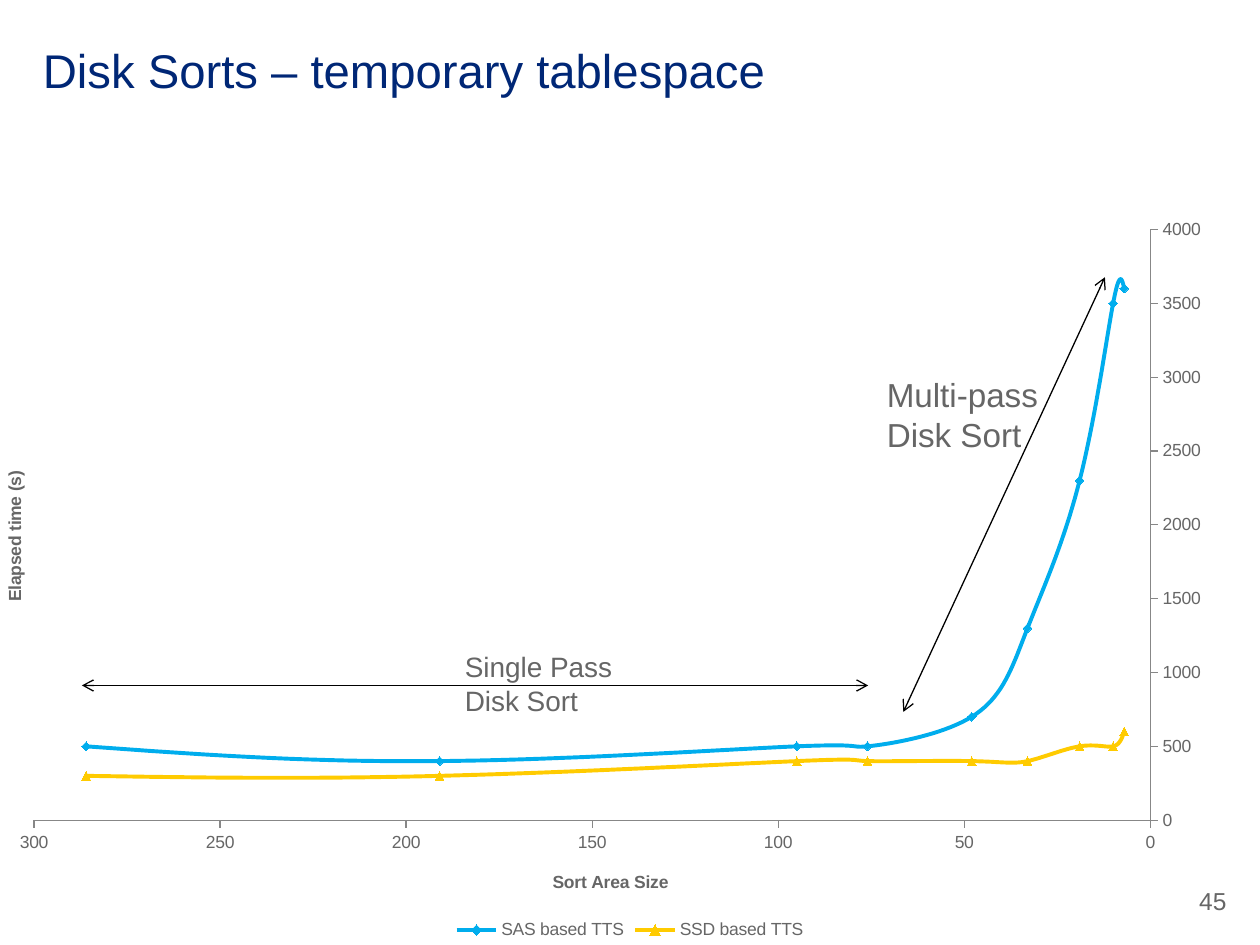
from dataclasses import dataclass

from pptx import Presentation
from pptx.chart.data import XyChartData
from pptx.dml.color import RGBColor
from pptx.enum.chart import XL_CHART_TYPE, XL_LEGEND_POSITION, XL_MARKER_STYLE, XL_TICK_MARK
from pptx.enum.shapes import MSO_CONNECTOR
from pptx.enum.text import MSO_ANCHOR, PP_ALIGN
from pptx.oxml import parse_xml
from pptx.oxml.ns import nsdecls, qn
from pptx.util import Pt


@dataclass(frozen=True)
class Theme:
    font: str = "Arial"
    title: RGBColor = RGBColor(0x00, 0x27, 0x76)
    text: RGBColor = RGBColor(0x66, 0x66, 0x66)
    axis: RGBColor = RGBColor(0x87, 0x87, 0x87)
    arrow: RGBColor = RGBColor(0, 0, 0)
    title_size: float = 27
    number_size: float = 14
    chart_size: float = 10


@dataclass(frozen=True)
class Label:
    lines: tuple
    box: tuple
    size: float


@dataclass(frozen=True)
class Arrow:
    begin: tuple
    end: tuple


@dataclass(frozen=True)
class Timing:
    name: str
    seconds: tuple
    color: RGBColor
    marker: XL_MARKER_STYLE


THEME = Theme()
SORT_AREAS = (7, 10, 19, 33, 48, 76, 95, 191, 286)
TIMINGS = (
    Timing("SAS based TTS", (3600, 3500, 2300, 1300, 700, 500, 500, 400, 500),
           RGBColor(0x00, 0xAD, 0xED), XL_MARKER_STYLE.DIAMOND),
    Timing("SSD based TTS", (600, 500, 500, 400, 400, 400, 400, 300, 300),
           RGBColor(0xFF, 0xCB, 0x00), XL_MARKER_STYLE.TRIANGLE),
)
ANNOTATIONS = (
    (Arrow((46.8, 391.7), (496.1, 391.7)),
     Label(("Single Pass", "Disk Sort"), (258.5, 367.9, 159.8, 46.1), 16)),
    (Arrow((516.2, 406.8), (631.4, 158.4)),
     Label(("Multi-pass", "Disk Sort"), (499.7, 210.2, 117.4, 53.3), 19)),
)
PAGE_NUMBER = Label(("45",), (678.2, 502.6, 41.8, 36), THEME.number_size)


def add_run(paragraph, text: str, size: float, color: RGBColor) -> None:
    """Append one formatted run to a paragraph."""
    run = paragraph.add_run()
    run.text = text
    run.font.name = THEME.font
    run.font.size = Pt(size)
    run.font.color.rgb = color


def fill_title(slide, text: str) -> None:
    """Place and format the title placeholder."""
    title = slide.shapes.title
    title.left, title.top, title.width, title.height = map(Pt, (24.5, 20.2, 612.7, 43.2))
    frame = title.text_frame
    frame.margin_left = 0
    frame.word_wrap = True
    frame.vertical_anchor = MSO_ANCHOR.TOP
    paragraph = frame.paragraphs[0]
    paragraph.alignment = PP_ALIGN.LEFT
    add_run(paragraph, text, THEME.title_size, THEME.title)


def add_label(slide, label: Label) -> None:
    """Add a text box with one paragraph per line."""
    frame = slide.shapes.add_textbox(*map(Pt, label.box)).text_frame
    frame.word_wrap = True
    for index, line in enumerate(label.lines):
        paragraph = frame.add_paragraph() if index else frame.paragraphs[0]
        add_run(paragraph, line, label.size, THEME.text)


def add_arrow(slide, arrow: Arrow) -> None:
    """Add a thin line with an open arrowhead at each end."""
    connector = slide.shapes.add_connector(
        MSO_CONNECTOR.STRAIGHT, *map(Pt, arrow.begin + arrow.end))
    connector.line.color.rgb = THEME.arrow
    connector.line.width = Pt(0.75)
    line = connector.line._get_or_add_ln()
    for tag in ("headEnd", "tailEnd"):
        line.append(parse_xml(f'<a:{tag} {nsdecls("a")} type="arrow"/>'))
    connector._element.spPr.append(parse_xml(f'<a:effectLst {nsdecls("a")}/>'))


def set_layout(element, index: int, inner: bool = False, **fractions: float) -> None:
    """Give a chart part a manual position in fractions of the chart."""
    existing = element.find(qn("c:layout"))
    if existing is not None:
        element.remove(existing)
    target = '<c:layoutTarget val="inner"/>' if inner else ""
    modes = "".join(f'<c:{side}Mode val="edge"/>' for side in "xy")
    values = "".join(f'<c:{key} val="{value}"/>' for key, value in fractions.items())
    element.insert(index, parse_xml(
        f'<c:layout {nsdecls("c")}><c:manualLayout>{target}{modes}{values}'
        '</c:manualLayout></c:layout>'))


def format_axis(axis, text: str, maximum: float, step: float, x: float, y: float,
                rotation: int = 0) -> None:
    """Set the scale, line and title of an axis."""
    axis.minimum_scale, axis.maximum_scale, axis.major_unit = 0, maximum, step
    axis.has_major_gridlines = False
    axis.major_tick_mark = XL_TICK_MARK.OUTSIDE
    axis.minor_tick_mark = XL_TICK_MARK.NONE
    axis.format.line.color.rgb = THEME.axis
    axis.format.line.width = Pt(0.75)
    title = axis.axis_title
    paragraph = title.text_frame.paragraphs[0]
    add_run(paragraph, text, THEME.chart_size, THEME.text)
    paragraph.runs[0].font.bold = True
    title._element.find(".//" + qn("a:bodyPr")).set("rot", str(rotation * 60000))
    set_layout(title._element, 1, x=x, y=y)


def add_timing_chart(slide) -> None:
    """Add the smooth scatter chart of elapsed time by sort area."""
    data = XyChartData()
    for timing in TIMINGS:
        series_data = data.add_series(timing.name)
        for area, seconds in zip(SORT_AREAS, timing.seconds):
            series_data.add_data_point(area, seconds)
    chart = slide.shapes.add_chart(
        XL_CHART_TYPE.XY_SCATTER_SMOOTH, *map(Pt, (0, 115.9, 720, 424.1)), data).chart
    chart.has_title = False
    chart.font.name = THEME.font
    chart.font.size = Pt(THEME.chart_size)
    chart.font.color.rgb = THEME.text
    chart.has_legend = True
    chart.legend.position = XL_LEGEND_POSITION.BOTTOM
    chart.legend.include_in_layout = False
    format_axis(chart.category_axis, "Sort Area Size", 300, 50, 0.436, 0.896)
    format_axis(chart.value_axis, "Elapsed time (s)", 4000, 500, 0, 0.357, -90)
    chart.category_axis.reverse_order = True
    plot = chart.plots[0]
    plot.vary_by_categories = False
    set_layout(plot._element.getparent(), 0, True, x=0.027, y=0.036, w=0.886, h=0.796)
    for series, timing in zip(plot.series, TIMINGS):
        series._element.get_or_add_smooth().val = True
        series.format.line.color.rgb = timing.color
        series.format.line.width = Pt(2.25)
        series.marker.style = timing.marker
        series.marker.size = 5
        for part in (series.marker.format.fill, series.marker.format.line.fill):
            part.solid()
            part.fore_color.rgb = timing.color


def main() -> None:
    """Build the slide and save it."""
    presentation = Presentation()
    presentation.slide_width, presentation.slide_height = Pt(720), Pt(540)
    slide = presentation.slides.add_slide(presentation.slide_layouts[5])
    add_label(slide, PAGE_NUMBER)
    fill_title(slide, "Disk Sorts – temporary tablespace")
    add_timing_chart(slide)
    for arrow, label in ANNOTATIONS:
        add_arrow(slide, arrow)
        add_label(slide, label)
    presentation.save("out.pptx")


if __name__ == "__main__":
    main()
